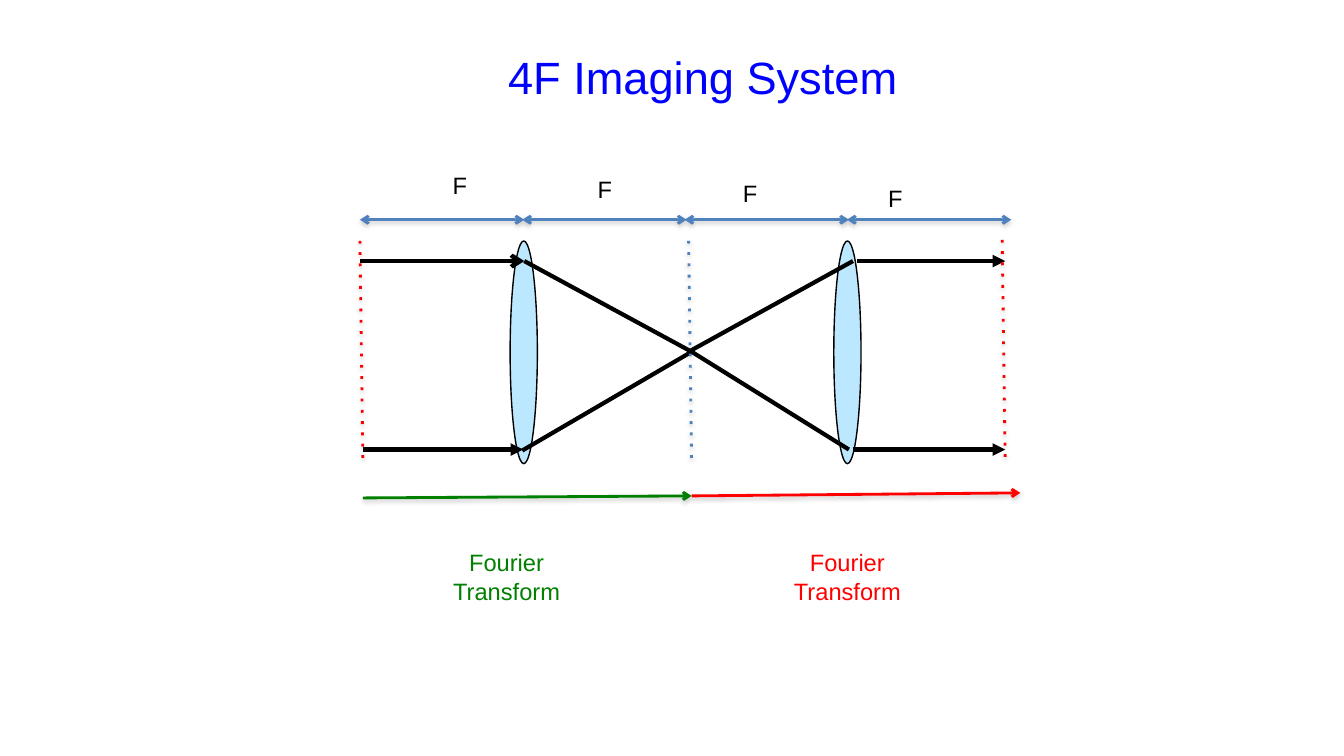
"""Draw a slide that explains the 4F imaging system."""
from lxml import etree
from pptx import Presentation
from pptx import util as u
from pptx.dml.color import RGBColor
from pptx.enum import shapes, text
from pptx.oxml.ns import qn

BLACK, BLUE, RED, GREEN = "000000", "4F81BD", "FF0000", "008000"
LENS_FILL, TITLE_BLUE, SHADOW_GREY = "BBE8FF", "0000FF", "808080"


def color(value):
    """Turn a hex string into a colour."""
    return RGBColor.from_string(value)


def add_child(parent, tag, **attributes):
    """Append a DrawingML element with the given attributes."""
    child = etree.SubElement(parent, qn(tag))
    for name, value in attributes.items():
        child.set(name, str(value))
    return child


def add_text(slide, content, left, top, width, height, size=16.9,
             fill=BLACK, align=text.PP_ALIGN.LEFT):
    """Add an unwrapped text box, one paragraph for each line of content."""
    box = slide.shapes.add_textbox(*map(u.Inches, (left, top, width, height)))
    frame = box.text_frame
    frame.text = content
    frame.word_wrap = False
    frame.auto_size = text.MSO_AUTO_SIZE.SHAPE_TO_FIT_TEXT
    for paragraph in frame.paragraphs:
        paragraph.alignment = align
        font = paragraph.runs[0].font
        font.name = "Arial"
        font.size = u.Pt(size)
        font.color.rgb = color(fill)


def add_line(slide, start, end, stroke=BLACK, width=3, dash=None,
             head=None, tail=None, shadow=False):
    """Add a straight line with optional dash, arrowheads and shadow."""
    line = slide.shapes.add_connector(
        shapes.MSO_CONNECTOR.STRAIGHT, *map(u.Inches, (*start, *end)))
    line.line.width = u.Pt(width)
    line.line.color.rgb = color(stroke)
    properties = line._element.spPr
    outline = properties.find(qn("a:ln"))
    if dash:
        add_child(outline, "a:prstDash", val=dash)
    for tag, arrow in (("a:headEnd", head), ("a:tailEnd", tail)):
        if arrow:
            add_child(outline, tag, type=arrow)
    effects = add_child(properties, "a:effectLst")
    if shadow:
        cast = add_child(effects, "a:outerShdw", blurRad=u.Pt(3.1),
                         dist=u.Pt(1.6), dir=5400000, rotWithShape=0)
        tint = add_child(cast, "a:srgbClr", val=SHADOW_GREY)
        add_child(tint, "a:alpha", val=38000)


def add_lens(slide, left):
    """Add a thin vertical lens."""
    lens = slide.shapes.add_shape(
        shapes.MSO_SHAPE.OVAL, *map(u.Inches, (left, 2.39, 0.27, 2.21)))
    lens.shadow.inherit = False
    lens.fill.solid()
    lens.fill.fore_color.rgb = color(LENS_FILL)
    lens.line.color.rgb = color(BLACK)
    lens.line.width = u.Pt(1)


def add_rays(slide):
    """Add the rays that enter, cross at the focus and leave."""
    for start, end, arrow in (
            ((6.86, 3.49), (5.18, 4.47), None),
            ((6.86, 3.49), (5.2, 2.59), None),
            ((3.57, 2.59), (5.2, 2.59), "arrow"),
            ((3.6, 4.46), (5.19, 4.46), "triangle"),
            ((6.86, 3.49), (8.42, 4.46), None),
            ((6.83, 3.49), (8.46, 2.59), None),
            ((8.5, 2.59), (9.97, 2.59), "triangle"),
            ((8.46, 4.46), (9.97, 4.46), "triangle")):
        add_line(slide, start, end, tail=arrow)


def add_planes(slide):
    """Add the dotted Fourier, object and image planes."""
    for left, top, stroke in ((6.83, 2.39, BLUE), (3.57, 2.39, RED),
                              (9.94, 2.38, RED)):
        add_line(slide, (left, top), (left + 0.03, top + 2.21), stroke,
                 width=2, dash="dot", shadow=True)


def add_focal_lengths(slide):
    """Add the four focal length arrows and their labels."""
    for index in range(4):
        left = 3.57 + 1.61 * index
        add_line(slide, (left, 2.18), (left + 1.63, 2.18), BLUE, width=2,
                 head="arrow", tail="arrow", shadow=True)
        add_text(slide, "F", 4.39 + 1.44 * index, 1.65 + 0.04 * index,
                 0.35, 0.38)


def add_transforms(slide):
    """Add the two Fourier transform arrows and their labels."""
    for start, end, label_left, stroke in (
            ((3.6, 4.94), (6.86, 4.92), 4.39, GREEN),
            ((6.86, 4.92), (10.12, 4.89), 7.77, RED)):
        add_line(slide, start, end, stroke, width=2, tail="arrow", shadow=True)
        add_text(slide, "Fourier\nTransform", label_left, 5.39, 1.27, 0.67,
                 fill=stroke, align=text.PP_ALIGN.CENTER)


def main():
    """Build and save the slide."""
    deck = Presentation()
    deck.slide_width, deck.slide_height = u.Inches(13.33), u.Inches(7.5)
    slide = deck.slides.add_slide(deck.slide_layouts[6])
    for lens_left in (5.06, 8.27):
        add_lens(slide, lens_left)
    add_rays(slide)
    add_planes(slide)
    add_focal_lengths(slide)
    add_text(slide, "4F Imaging System", 4.94, 0.44, 4.11, 0.65,
             size=32.3, fill=TITLE_BLUE)
    add_transforms(slide)
    deck.save("out.pptx")


if __name__ == "__main__":
    main()
